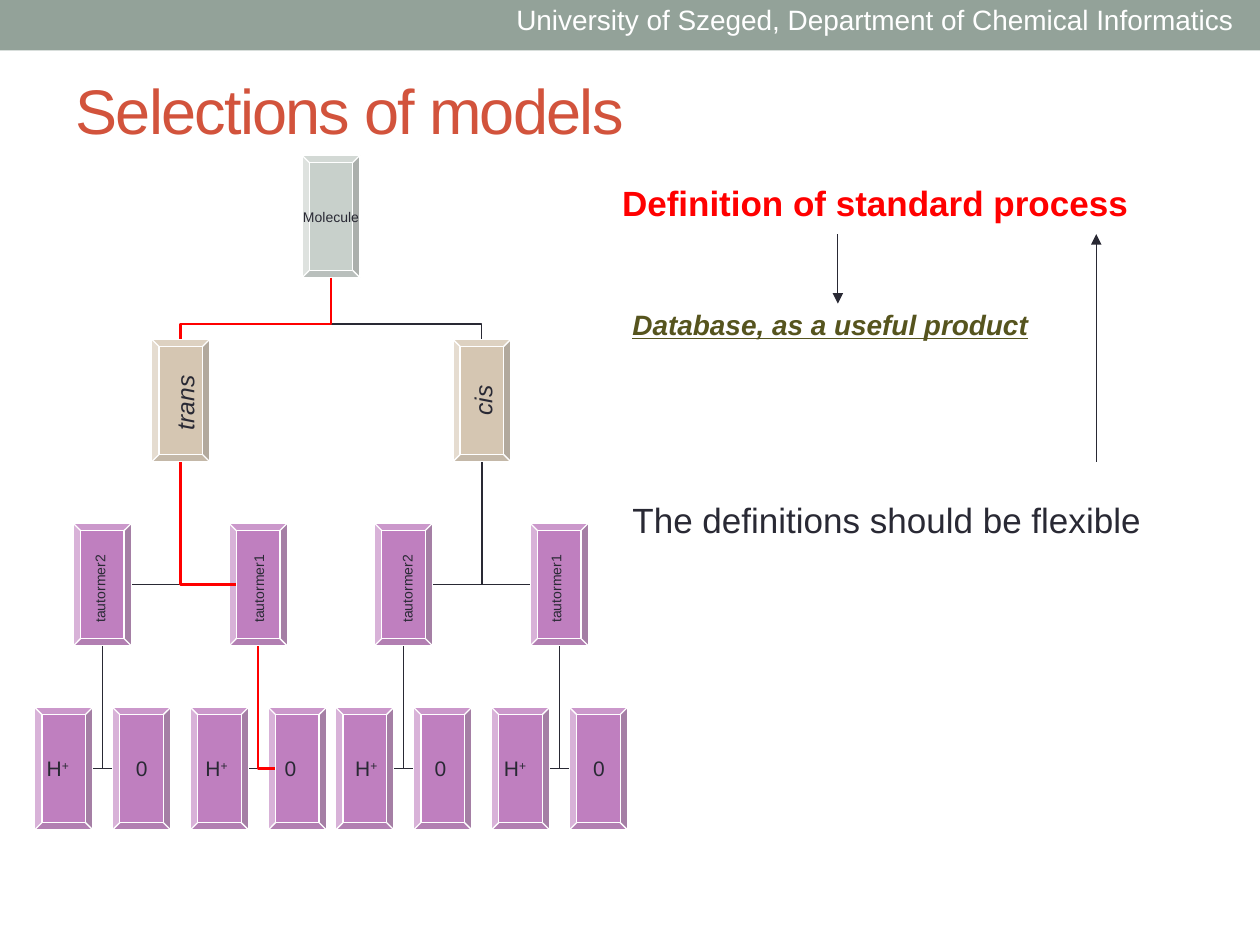
from pptx import Presentation
from pptx import util as u
from pptx.dml.color import RGBColor
from pptx.enum import shapes, text
from pptx.oxml.ns import qn
from lxml import etree

SAGE = RGBColor(0x93, 0xA2, 0x99)
TAN = RGBColor(0xAD, 0x8F, 0x67)
PURPLE = RGBColor(0x80, 0x00, 0x80)
DARK = RGBColor(0x29, 0x29, 0x34)
RED = RGBColor(0xFF, 0x00, 0x00)
OLIVE = RGBColor(0x56, 0x54, 0x1E)
RUST = RGBColor(0xD2, 0x53, 0x3C)
WHITE = RGBColor(0xFF, 0xFF, 0xFF)
FONT = "Arial"

# Tree grid in cm: the right half repeats the left half, shifted by BRANCH
BOX_WIDTH, BOX_HEIGHT = 1.17, 2.47
TOP, LEVEL, BRANCH = 3.13, 3.71, 6.07
ROOT, ISOMER = 6.09, 3.06
TAUTOMERS = [1.48, 4.62]
LEAVES = [0.7 + 1.57 * i for i in range(4)]

presentation = Presentation()
presentation.slide_width = u.Cm(25.4)
presentation.slide_height = u.Cm(19.05)
slide = presentation.slides.add_slide(presentation.slide_layouts[5])


def add_label(box, parts, size, color=DARK, upright=False, wrap=False, **style):
    """Add a text box at box (cm); parts pairs each text with its baseline shift."""
    shape = slide.shapes.add_textbox(*[u.Cm(value) for value in box])
    frame = shape.text_frame
    frame.word_wrap = wrap
    frame.auto_size = text.MSO_AUTO_SIZE.SHAPE_TO_FIT_TEXT
    paragraph = frame.paragraphs[0]
    if upright:
        shape.rotation = 270
        frame.margin_left = frame.margin_right = 0
        paragraph.alignment = text.PP_ALIGN.CENTER
    for words, baseline in parts:
        run = paragraph.add_run()
        run.text = words
        run.font.name = FONT
        run.font.size = u.Pt(size)
        run.font.color.rgb = color
        for name, value in style.items():
            setattr(run.font, name, value)
        if baseline:
            run.font._element.set("baseline", str(baseline * 1000))
    return paragraph


def add_line(kind, begin, end, color=DARK, width=0.75, preset=None):
    """Add a connector between two points (cm)."""
    connector = slide.shapes.add_connector(kind, *[u.Cm(v) for v in (*begin, *end)])
    connector.line.color.rgb = color
    connector.line.width = u.Pt(width)
    properties = connector._element.spPr
    etree.SubElement(properties, qn("a:effectLst"))
    if preset:
        properties.find(qn("a:prstGeom")).set("prst", preset)
    return connector


# Header band
band = slide.shapes.add_shape(shapes.MSO_SHAPE.RECTANGLE, 0, 0, u.Cm(25.4), u.Cm(1.02))
band.shadow.inherit = False
band.fill.solid()
band.fill.fore_color.rgb = SAGE
band.line.fill.background()

# Title
title = slide.shapes.title
title.left, title.top = u.Cm(1.27), u.Cm(1.27)
title.width, title.height = u.Cm(22.86), u.Cm(1.85)
title.text_frame.vertical_anchor = text.MSO_ANCHOR.MIDDLE
paragraph = title.text_frame.paragraphs[0]
paragraph.alignment = text.PP_ALIGN.LEFT
run = paragraph.add_run()
run.text = "Selections of models"
run.font.name = FONT
run.font.size = u.Pt(36)
run.font.color.rgb = RUST
run.font._element.set("spc", "-100")

# Links from each child's side up to its parent's lower edge
ELBOW = shapes.MSO_CONNECTOR.ELBOW
links = []
for shift in (0, BRANCH):
    parents = [(ISOMER, 2, TAUTOMERS), (TAUTOMERS[0], 3, LEAVES[:2]),
               (TAUTOMERS[1], 3, LEAVES[2:])]
    for parent, level, (left, right) in parents:
        center = parent + BOX_WIDTH / 2 + shift
        links.append((left + BOX_WIDTH + shift, level, center, DARK, 0.75))
        links.append((right + shift, level, center, DARK, 0.75))
# The selected route ends on the inner face of the bevel
route = [(TAUTOMERS[1] + 0.13, 2, ISOMER + BOX_WIDTH / 2, RED, 1.5),
         (LEAVES[3] + 0.13, 3, TAUTOMERS[1] + BOX_WIDTH / 2, RED, 1.5)]

# Nodes: (left, level, colour)
nodes = [(ROOT, 0, SAGE)]
for shift in (0, BRANCH):
    nodes.append((ISOMER + shift, 1, TAN))
    nodes += [(left + shift, 2, PURPLE) for left in TAUTOMERS]
    nodes += [(left + shift, 3, PURPLE) for left in LEAVES]

# Thin links go behind the nodes, the selected route in front
root_x = ROOT + BOX_WIDTH / 2
root_bottom = TOP + BOX_HEIGHT
drop = LEVEL - BOX_HEIGHT
reach = BRANCH / 2
for group, forks in ((links, [(-1, DARK, 0.75), (1, DARK, 0.75)]),
                     (route, [(-1, RED, 1.5)])):
    for child_x, level, center, color, width in group:
        child_y = TOP + level * LEVEL + BOX_HEIGHT / 2
        parent_y = TOP + (level - 1) * LEVEL + BOX_HEIGHT
        add_line(ELBOW, (child_x, child_y), (center, parent_y), color, width,
                 "bentConnector2")
    for side, color, width in forks:
        # A quarter turn makes the connector leave the root downwards
        x, y = root_x + side * reach / 2, root_bottom + drop / 2
        fork = add_line(ELBOW, (x + side * drop / 2, y - reach / 2),
                        (x - side * drop / 2, y + reach / 2), color, width)
        properties = fork._element.spPr
        properties.find(qn("a:xfrm")).set("rot", "5400000" if side < 0 else "16200000")
        guides = properties.find(qn("a:prstGeom")).get_or_add_avLst()
        etree.SubElement(guides, qn("a:gd"), name="adj1", fmla="val 75000")
    if group is route:
        continue
    for left, level, color in nodes:
        node = slide.shapes.add_shape(
            shapes.MSO_SHAPE.BEVEL, u.Cm(left), u.Cm(TOP + level * LEVEL),
            u.Cm(BOX_WIDTH), u.Cm(BOX_HEIGHT))
        node.shadow.inherit = False
        node.fill.solid()
        node.fill.fore_color.rgb = color
        tint = node._element.spPr.find(qn("a:solidFill"))[0]
        etree.SubElement(tint, qn("a:alpha"), val="50000")
        node.line.color.rgb = WHITE
        node.line.width = u.Pt(0.75)
        if level == 0:
            frame = node.text_frame
            frame.word_wrap = False
            frame.margin_left = frame.margin_right = 0
            frame.margin_top = frame.margin_bottom = 0
            paragraph = frame.paragraphs[0]
            paragraph.alignment = text.PP_ALIGN.CENTER
            run = paragraph.add_run()
            run.text = "Molecule"
            run.font.name = FONT
            run.font.size = u.Pt(8)
            run.font.color.rgb = DARK

# Node labels
add_label((2.92, 7.7, 1.6, 0.84), [("trans", 0)], 14, upright=True, italic=True)
add_label((9.17, 7.65, 1.12, 0.84), [("cis", 0)], 14, upright=True, italic=True)
for name, lefts in (("tautormer2", (1.07, 7.26)), ("tautormer1", (4.27, 10.26))):
    for left in lefts:
        add_label((left, 11.58, 1.88, 0.58), [(name, 0)], 8, upright=True)
for left in (0.69, 3.89, 6.91, 9.91):
    add_label((left, 15.11, 0.99, 0.76), [("H", 0), ("+", 30)], 12)
for left in (2.49, 5.49, 8.51, 11.71):
    add_label((left, 15.11, 0.74, 0.76), [("0", 0)], 12)

# Statements and header text
add_label((12.29, 3.53, 11.4, 1.09), [("Definition of standard process", 0)], 20, RED,
          wrap=True, bold=True)
add_label((12.5, 9.93, 11, 1.09), [("The definitions should be flexible", 0)], 20,
          wrap=True)
product = add_label((12.5, 6.07, 8.51, 0.94), [("Database, as a useful product", 0)], 16,
                    OLIVE, bold=True, italic=True, underline=True)
product.space_before = u.Pt(3.2)
add_label((10.16, -0.08, 15.16, 0.94),
          [("University of Szeged, Department of Chemical Informatics", 0)], 16, WHITE)

# Arrows between the statements
for x, bottom, end in ((16.89, 6.12, "tailEnd"), (22.1, 9.32, "headEnd")):
    arrow = add_line(shapes.MSO_CONNECTOR.STRAIGHT, (x, 4.72), (x, bottom))
    etree.SubElement(arrow.line._get_or_add_ln(), qn(f"a:{end}"), type="triangle")

presentation.save("out.pptx")
